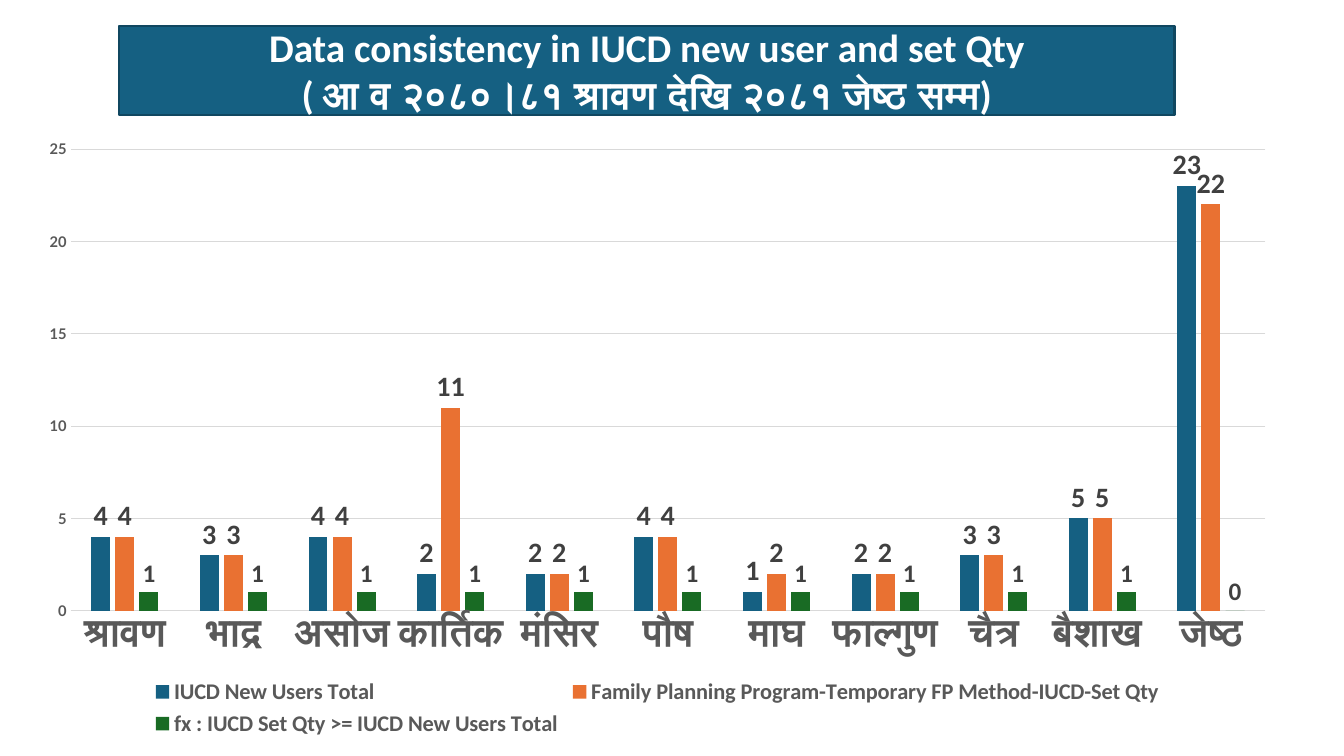
from dataclasses import dataclass
from typing import Any

from lxml.etree import SubElement
from pptx import Presentation
from pptx.chart.chart import Chart
from pptx.chart.data import CategoryChartData
from pptx.dml.color import RGBColor
from pptx.enum.chart import (XL_CHART_TYPE, XL_LABEL_POSITION,
                             XL_LEGEND_POSITION, XL_TICK_MARK)
from pptx.enum.shapes import MSO_SHAPE
from pptx.enum.text import MSO_ANCHOR, PP_ALIGN
from pptx.oxml.ns import qn
from pptx.slide import Slide
from pptx.util import Emu, Pt

EMU_PER_PX = 9144


@dataclass(frozen=True)
class Theme:
    blue: str = "156082"
    orange: str = "E97132"
    green: str = "196B24"
    border: str = "104760"
    white: str = "FFFFFF"
    axis_text: str = "595959"
    label_text: str = "404040"
    grid: str = "D9D9D9"
    font: str = "Calibri"
    value_font: str = "Lato"
    heading_size: float = 28
    value_size: float = 10.5
    legend_size: float = 16
    label_size: float = 20
    small_label_size: float = 18


@dataclass(frozen=True)
class Box:
    x: int
    y: int
    w: int
    h: int

    def emu(self) -> list[Emu]:
        return [px(v) for v in (self.x, self.y, self.w, self.h)]


@dataclass(frozen=True)
class Series:
    name: str
    values: tuple[int, ...]
    color: str
    label_size: float


THEME = Theme()
TITLE_BOX = Box(118, 26, 1047, 88)
CHART_BOX = Box(24, 127, 1256, 609)
PLOT_BOX = Box(46, 21, 1185, 458)  # relative to CHART_BOX
TITLE_LINES = ("Data consistency in IUCD new user and set Qty",
               "( आ व २०८०।८१ श्रावण देखि २०८१ जेष्ठ सम्म)")
MONTHS = ("श्रावण", "भाद्र", "असोज", "कार्तिक", "मंसिर", "पौष",
          "माघ", "फाल्गुण", "चैत्र", "बैशाख ", "जेष्ठ")
SERIES = (
    Series("IUCD New Users Total", (4, 3, 4, 2, 2, 4, 1, 2, 3, 5, 23),
           THEME.blue, THEME.label_size),
    Series("Family Planning Program-Temporary FP Method-IUCD-Set Qty",
           (4, 3, 4, 11, 2, 4, 2, 2, 3, 5, 22),
           THEME.orange, THEME.label_size),
    Series("fx : IUCD Set Qty >= IUCD New Users Total",
           (1, 1, 1, 1, 1, 1, 1, 1, 1, 1, 0),
           THEME.green, THEME.small_label_size),
)


def px(n: int) -> Emu:
    return Emu(n * EMU_PER_PX)


def rgb(color: str) -> RGBColor:
    return RGBColor.from_string(color)


def set_attrs(target: Any, **values: Any) -> None:
    for name, value in values.items():
        setattr(target, name, value)


def set_font(font: Any, size: float, color: str,
             name: str = THEME.font) -> None:
    set_attrs(font, size=Pt(size), bold=True, name=name)
    font.color.rgb = rgb(color)


def set_fill(fill: Any, color: str) -> None:
    fill.solid()
    fill.fore_color.rgb = rgb(color)


def set_line(line: Any, color: str, width: float) -> None:
    set_fill(line.fill, color)
    line.width = Pt(width)


def add_title(slide: Slide) -> None:
    sp = slide.shapes.add_shape(MSO_SHAPE.RECTANGLE, *TITLE_BOX.emu())
    sp.shadow.inherit = False
    set_fill(sp.fill, THEME.blue)
    set_line(sp.line, THEME.border, 1.5)
    tf = sp.text_frame
    set_attrs(tf, word_wrap=True, vertical_anchor=MSO_ANCHOR.MIDDLE)
    for i, text in enumerate(TITLE_LINES):
        p = tf.add_paragraph() if i else tf.paragraphs[0]
        p.alignment = PP_ALIGN.CENTER
        r = p.add_run()
        r.text = text
        set_font(r.font, THEME.heading_size, THEME.white)


def place_plot(chart: Chart) -> None:
    """Fix the inner plot area as fractions of the chart frame."""
    area = chart.element.find(".//" + qn("c:plotArea"))
    for old in area.findall(qn("c:layout")):
        area.remove(old)
    layout = SubElement(area, qn("c:layout"))
    area.insert(0, layout)
    manual = SubElement(layout, qn("c:manualLayout"))
    settings = {"layoutTarget": "inner", "xMode": "edge", "yMode": "edge",
                "x": PLOT_BOX.x / CHART_BOX.w, "y": PLOT_BOX.y / CHART_BOX.h,
                "w": PLOT_BOX.w / CHART_BOX.w, "h": PLOT_BOX.h / CHART_BOX.h}
    for tag, value in settings.items():
        SubElement(manual, qn(f"c:{tag}")).set("val", str(value))


def format_axes(chart: Chart) -> None:
    months, counts = chart.category_axis, chart.value_axis
    for axis in (months, counts):
        set_attrs(axis, major_tick_mark=XL_TICK_MARK.NONE,
                  minor_tick_mark=XL_TICK_MARK.NONE)
    set_font(months.tick_labels.font, THEME.heading_size, THEME.axis_text)
    set_line(months.format.line, THEME.grid, 0.75)
    set_attrs(counts, minimum_scale=0, maximum_scale=25, major_unit=5,
              has_major_gridlines=True)
    set_font(counts.tick_labels.font, THEME.value_size, THEME.axis_text,
             THEME.value_font)
    counts.format.line.fill.background()
    set_line(counts.major_gridlines.format.line, THEME.grid, 0.75)


def add_month_chart(slide: Slide) -> None:
    data = CategoryChartData()
    data.categories = MONTHS
    for s in SERIES:
        data.add_series(s.name, s.values)
    chart = slide.shapes.add_chart(
        XL_CHART_TYPE.COLUMN_CLUSTERED, *CHART_BOX.emu(), data).chart
    set_attrs(chart, has_title=False, has_legend=True)
    set_attrs(chart.font, name=THEME.value_font, size=Pt(10))
    set_attrs(chart.legend, position=XL_LEGEND_POSITION.BOTTOM,
              include_in_layout=False)
    set_font(chart.legend.font, THEME.legend_size, THEME.axis_text)
    plot = chart.plots[0]
    set_attrs(plot, gap_width=219, overlap=-27, vary_by_categories=False)
    for s, bars in zip(SERIES, plot.series):
        set_fill(bars.format.fill, s.color)
        bars.invert_if_negative = False
        labels = bars.data_labels
        set_attrs(labels, show_value=True,
                  position=XL_LABEL_POSITION.OUTSIDE_END)
        set_font(labels.font, s.label_size, THEME.label_text)
    format_axes(chart)
    place_plot(chart)


def main() -> None:
    prs = Presentation()
    set_attrs(prs, slide_width=px(1333), slide_height=px(750))
    slide = prs.slides.add_slide(prs.slide_layouts[6])
    add_month_chart(slide)
    add_title(slide)
    prs.save("out.pptx")


if __name__ == "__main__":
    main()
